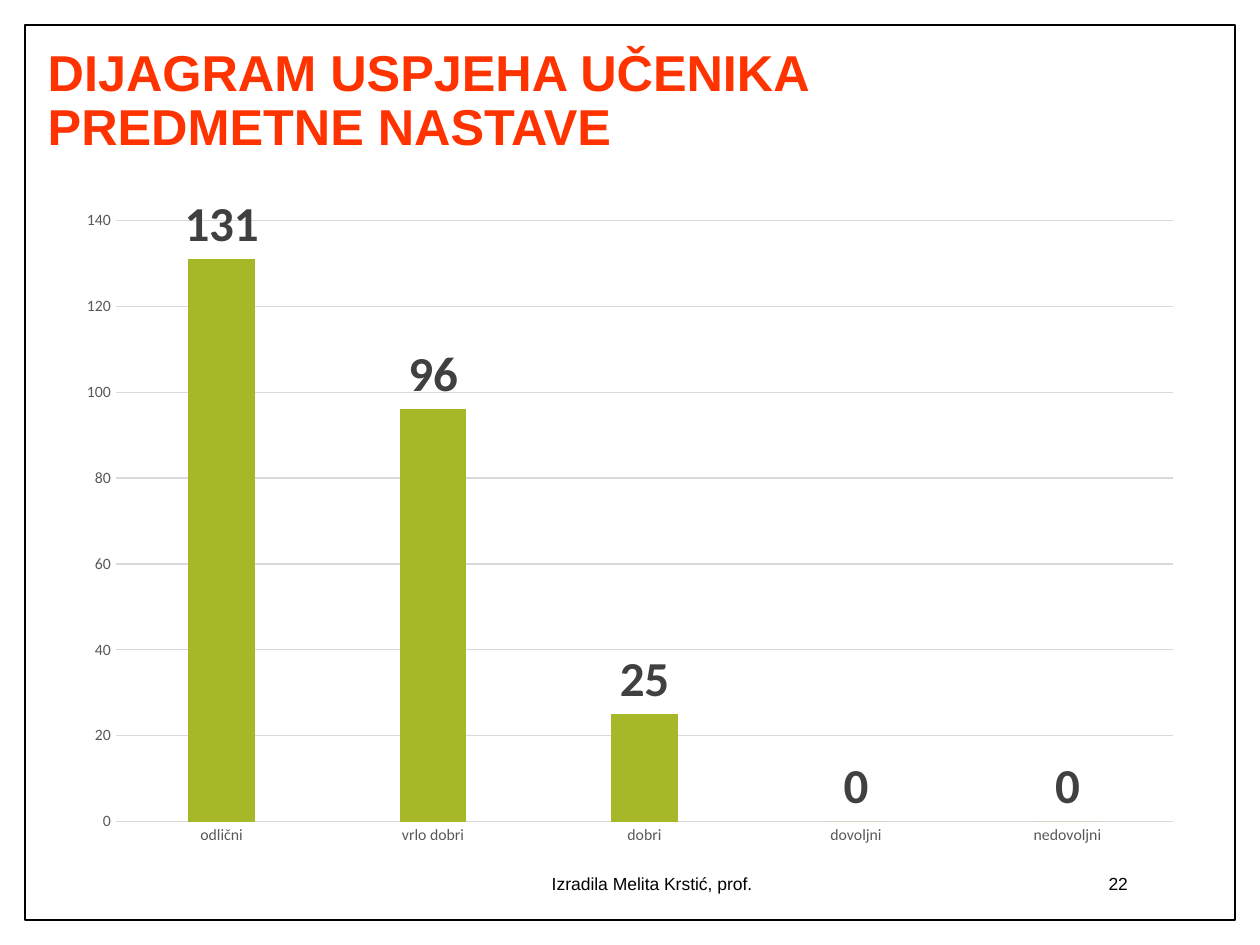
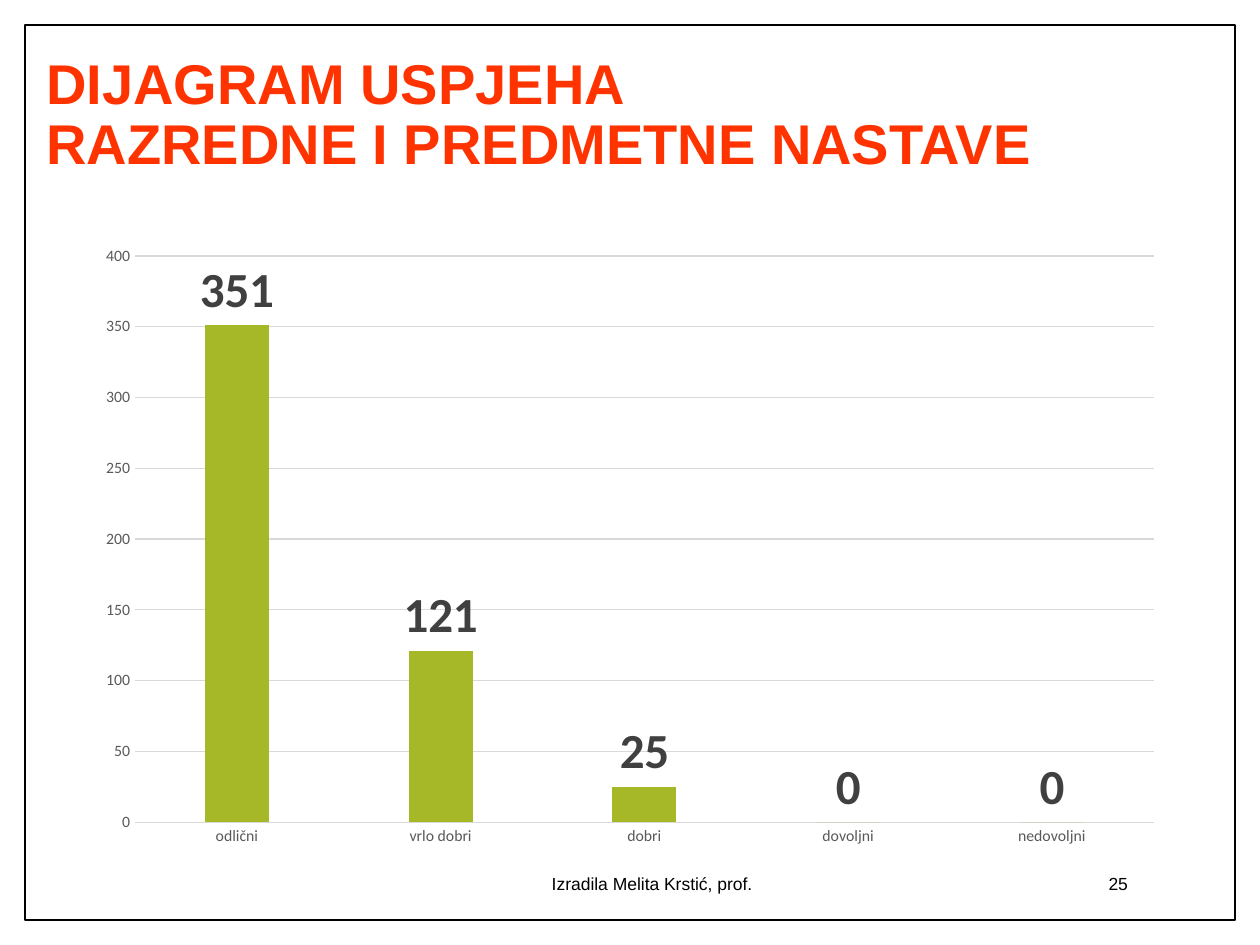
from lxml import etree
from pptx import Presentation
from pptx.chart.data import CategoryChartData
from pptx.dml.color import RGBColor
from pptx.enum.chart import XL_CHART_TYPE, XL_LABEL_POSITION, XL_TICK_MARK
from pptx.enum.shapes import MSO_SHAPE
from pptx.enum.text import MSO_ANCHOR, PP_ALIGN
from pptx.util import Pt

RECTANGLE = MSO_SHAPE.RECTANGLE
COLUMNS = XL_CHART_TYPE.COLUMN_CLUSTERED
OUTSIDE_END = XL_LABEL_POSITION.OUTSIDE_END
NO_TICKS = XL_TICK_MARK.NONE
MIDDLE = MSO_ANCHOR.MIDDLE
LEFT, CENTER, RIGHT = PP_ALIGN.LEFT, PP_ALIGN.CENTER, PP_ALIGN.RIGHT

WHITE = RGBColor(0xFF, 0xFF, 0xFF)
BLACK = RGBColor(0x00, 0x00, 0x00)
TITLE_RED = RGBColor(0xFF, 0x33, 0x00)
BAR_GREEN = RGBColor(0xA6, 0xB7, 0x27)
AXIS_GREY = RGBColor(0x59, 0x59, 0x59)
LABEL_GREY = RGBColor(0x40, 0x40, 0x40)
GRID_GREY = RGBColor(0xD9, 0xD9, 0xD9)

TEXT_FONT = "Arial"
CHART_FONT = "Calibri"
AUTHOR = "Izradila Melita Krstić, prof."
GRADES = ["odlični", "vrlo dobri", "dobri", "dovoljni", "nedovoljni"]


def points(*lengths):
    return [Pt(length) for length in lengths]


def style_font(font, name, size, color, bold=False):
    font.name = name
    font.size = Pt(size)
    font.color.rgb = color
    font.bold = bold


def add_frame(slide):
    frame = slide.shapes.add_shape(RECTANGLE, *points(14.4, 14.4, 691.2, 511.2))
    frame.shadow.inherit = False
    frame.fill.solid()
    frame.fill.fore_color.rgb = WHITE
    frame.line.color.rgb = BLACK
    frame.line.width = Pt(1)


def add_text(slide, text, box, size, color=BLACK, bold=False, alignment=LEFT,
             line_spacing=1.0):
    text_frame = slide.shapes.add_textbox(*points(*box)).text_frame
    text_frame.word_wrap = True
    text_frame.vertical_anchor = MIDDLE
    paragraph = text_frame.paragraphs[0]
    paragraph.text = text
    paragraph.alignment = alignment
    paragraph.line_spacing = line_spacing
    style_font(paragraph.font, TEXT_FONT, size, color, bold)


def add_title(slide, text, box, size):
    add_text(slide, text, box, size, TITLE_RED, bold=True, line_spacing=0.9)


def add_footer(slide, number):
    add_text(slide, AUTHOR, (233.3, 490.3, 278.6, 28.8), 10, alignment=CENTER)
    add_text(slide, str(number), (550.8, 490.3, 100.8, 28.8), 10, alignment=RIGHT)


def style_axis(axis):
    axis.major_tick_mark = NO_TICKS
    axis.minor_tick_mark = NO_TICKS
    style_font(axis.tick_labels.font, CHART_FONT, 9, AXIS_GREY)


def style_line(line):
    line.color.rgb = GRID_GREY
    line.width = Pt(0.75)


def add_grade_chart(slide, counts, box, maximum, step):
    data = CategoryChartData()
    data.categories = GRADES
    data.add_series("Series 1", counts)
    chart = slide.shapes.add_chart(COLUMNS, *points(*box), data).chart
    chart.has_legend = False
    chart.has_title = False
    style_font(chart.font, CHART_FONT, 10, BLACK)

    # Axes and grid
    style_axis(chart.category_axis)
    style_line(chart.category_axis.format.line)
    value_axis = chart.value_axis
    style_axis(value_axis)
    value_axis.format.line.fill.background()
    value_axis.minimum_scale = 0
    value_axis.maximum_scale = maximum
    value_axis.major_unit = step
    value_axis.has_major_gridlines = True
    style_line(value_axis.major_gridlines.format.line)

    # Columns and their values
    plot = chart.plots[0]
    plot.vary_by_categories = False
    plot.gap_width = 219
    plot.overlap = -27
    series = plot.series[0]
    series.format.fill.solid()
    series.format.fill.fore_color.rgb = BAR_GREEN
    labels = series.data_labels
    labels.show_value = True
    labels.position = OUTSIDE_END
    style_font(labels.font, CHART_FONT, 28, LABEL_GREY, bold=True)


def add_result_slide(presentation, number, title, title_box, title_size,
                     counts, chart_box, maximum, step):
    slide = presentation.slides.add_slide(presentation.slide_layouts[6])
    add_frame(slide)
    add_title(slide, title, title_box, title_size)
    add_footer(slide, number)
    add_grade_chart(slide, counts, chart_box, maximum, step)


def main():
    presentation = Presentation()
    presentation.slide_width, presentation.slide_height = points(720, 540)

    # Subject teaching
    add_result_slide(
        presentation, 22, "DIJAGRAM USPJEHA UČENIKA\vPREDMETNE NASTAVE",
        (20.2, 20.9, 674.6, 74.9), 28.8,
        (131, 96, 25, 0, 0), (36.7, 111.6, 646.6, 378.7), 140, 20)

    # Class and subject teaching together
    add_result_slide(
        presentation, 25, "DIJAGRAM USPJEHA\vRAZREDNE I PREDMETNE NASTAVE",
        (19.4, 21.6, 686.2, 90), 32,
        (351, 121, 25, 0, 0), (48.2, 133.9, 623.5, 356.4), 400, 50)

    presentation.save("out.pptx")


if __name__ == "__main__":
    main()
